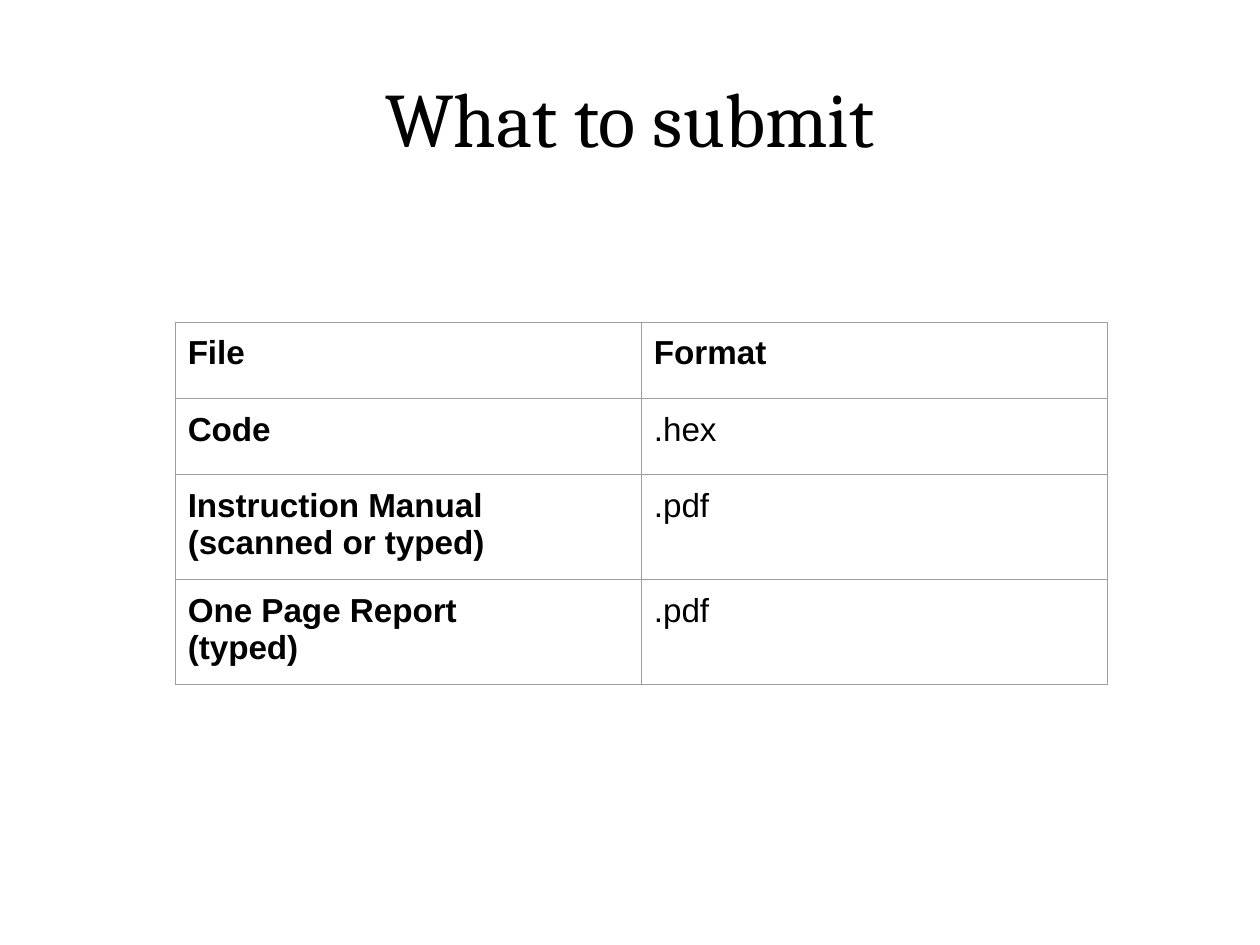
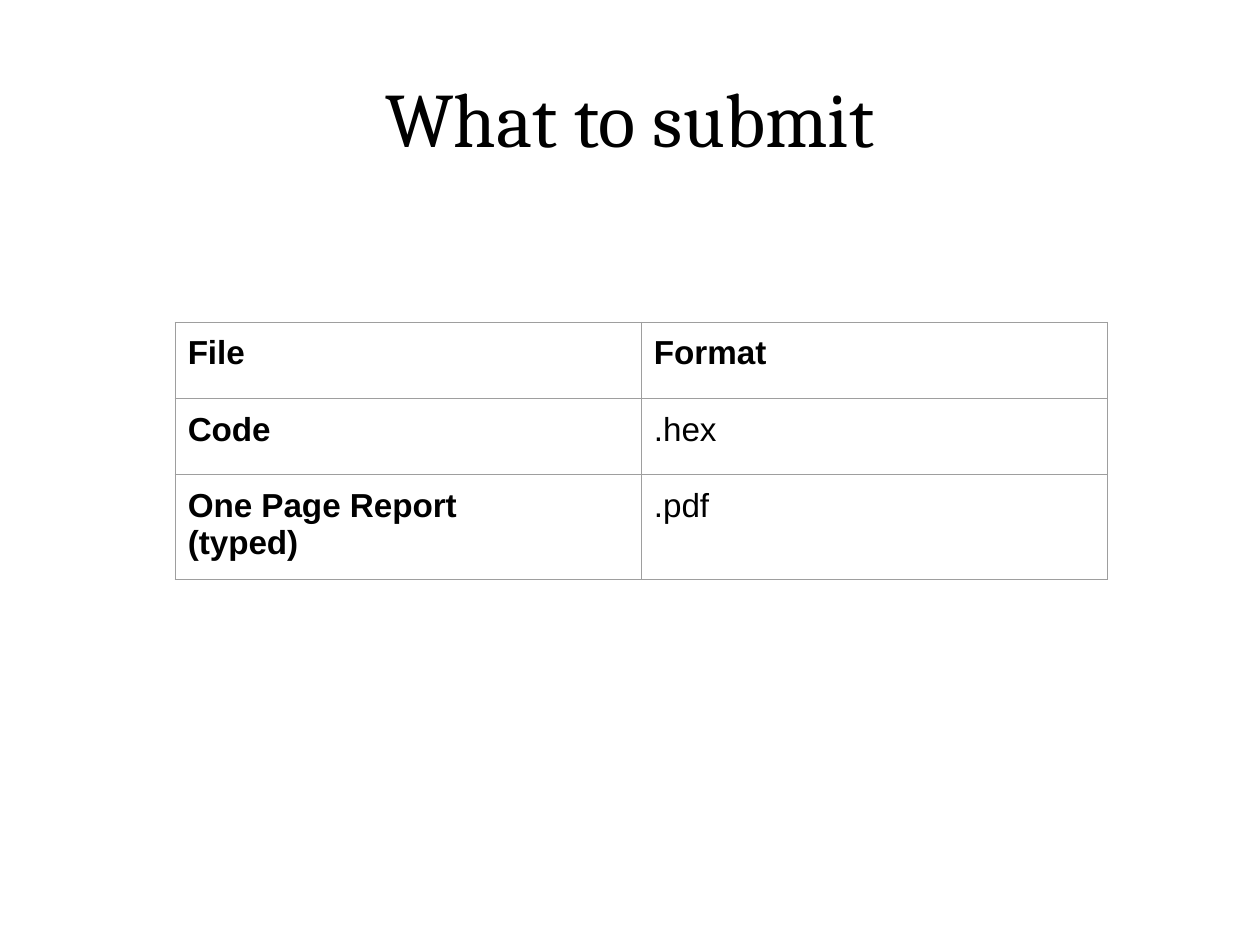
"""Build two slides that list the files to submit and their formats."""
from lxml import etree
from pptx import Presentation
from pptx import util as u
from pptx.dml.color import RGBColor
from pptx.enum import text
from pptx.oxml.ns import qn

COLORS = {"background": "FFFFFF", "text": "000000", "border": "9E9E9E"}
COLUMN_WIDTH = 266.4
SHORT_ROW, TALL_ROW = 43.5, 56.6

header = ("File", "Format")
code = ("Code", ".hex")
manual = ("Instruction Manual\n(scanned or typed)", ".pdf")
report = ("One Page Report\n(typed)", ".pdf")
submissions = [
    [header, code, manual, report],
    [header, code, report],
]


def style_text(frame, font_name, size, bold=False):
    for paragraph in frame.paragraphs:
        for run in paragraph.runs:
            run.font.name = font_name
            run.font.size = u.Pt(size)
            run.font.bold = bold
            run.font.color.rgb = RGBColor.from_string(COLORS["text"])


def add_borders(cell):
    properties = cell._tc.get_or_add_tcPr()
    for position, side in enumerate(("lnL", "lnR", "lnT", "lnB")):
        line = etree.Element(qn(f"a:{side}"), w=str(u.Pt(0.75)))
        fill = etree.SubElement(line, qn("a:solidFill"))
        etree.SubElement(fill, qn("a:srgbClr"), val=COLORS["border"])
        properties.insert(position, line)


presentation = Presentation()
presentation.slide_width = u.Pt(720)
presentation.slide_height = u.Pt(540)

for rows in submissions:
    slide = presentation.slides.add_slide(presentation.slide_layouts[6])
    slide.background.fill.solid()
    slide.background.fill.fore_color.rgb = RGBColor.from_string(COLORS["background"])

    title = slide.shapes.add_textbox(u.Pt(36), u.Pt(21.6), u.Pt(648), u.Pt(90))
    title_frame = title.text_frame
    title_frame.word_wrap = True
    title_frame.vertical_anchor = text.MSO_ANCHOR.MIDDLE
    title_frame.text = "What to submit"
    title_frame.paragraphs[0].alignment = text.PP_ALIGN.CENTER
    style_text(title_frame, "Cambria", 44)

    heights = [TALL_ROW if "\n" in row[0] else SHORT_ROW for row in rows]
    table = slide.shapes.add_table(
        len(rows), len(header), u.Pt(100.1), u.Pt(184.2),
        u.Pt(COLUMN_WIDTH * len(header)), u.Pt(sum(heights))).table
    table.first_row = False
    table.horz_banding = False

    for row_index, row in enumerate(rows):
        table.rows[row_index].height = u.Pt(heights[row_index])
        for column_index, label in enumerate(row):
            cell = table.cell(row_index, column_index)
            cell.margin_left = cell.margin_right = u.Pt(7.2)
            cell.margin_top = cell.margin_bottom = u.Pt(7.2)
            cell.fill.solid()
            cell.fill.fore_color.rgb = RGBColor.from_string(COLORS["background"])
            add_borders(cell)
            cell.text_frame.text = label
            style_text(cell.text_frame, "Arial", 19,
                       bold=row_index == 0 or column_index == 0)

presentation.save("out.pptx")
